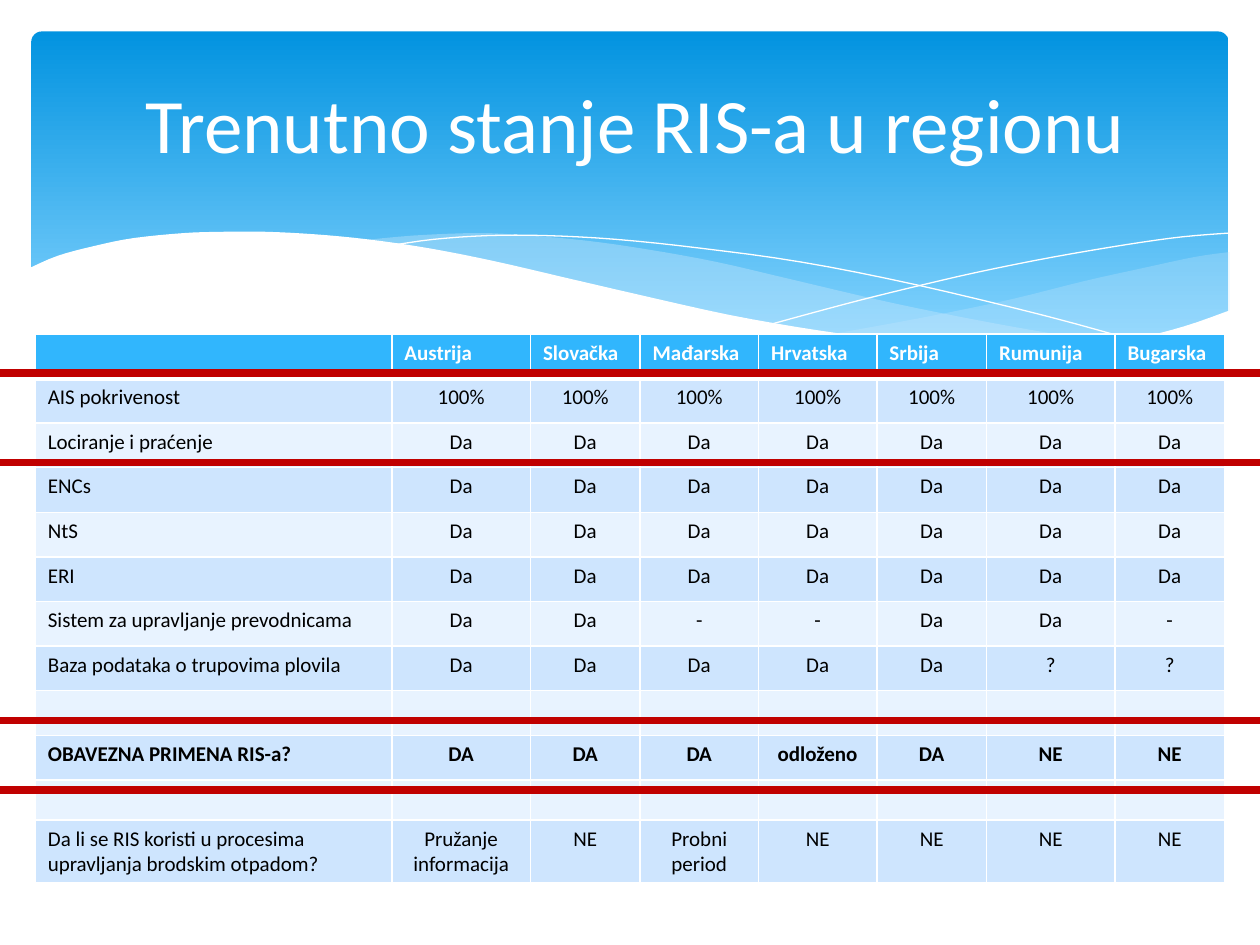
from lxml import etree
from pptx import Presentation
from pptx import util as u
from pptx.dml.color import RGBColor
from pptx.enum import shapes, text
from pptx.oxml.ns import qn

WHITE = RGBColor(0xFF, 0xFF, 0xFF)
BLACK = RGBColor(0, 0, 0)
DEEP = RGBColor(0x02, 0x93, 0xE0)
LIGHT = RGBColor(0x83, 0xD3, 0xFE)
MIST = RGBColor(0xC6, 0xE7, 0xFC)
HEAD = RGBColor(0x31, 0xB6, 0xFD)
BANDS = RGBColor(0xE8, 0xF3, 0xFF), RGBColor(0xCE, 0xE5, 0xFE)
RED = RGBColor(0xC0, 0, 0)
FONT = "Calibri"

RIGHT = [
    [(9.76, 2), (9.48, 2.04), (9.06, 2.13), (8.61, 2.23), (8.05, 2.37), (7.53, 2.48), (7.06, 2.57), (6.61, 2.65)],
    [(6.61, 2.65), (7.05, 2.71), (7.57, 2.76), (8.03, 2.78), (8.54, 2.76), (8.97, 2.7), (9.35, 2.62), (9.76, 2.47)],
]
MID = [
    [(8.93, 2.73), (8.37, 2.65), (7.75, 2.54), (7.06, 2.4), (6.29, 2.22), (5.69, 2.08), (5.14, 1.98),
     (4.65, 1.91), (4.2, 1.87), (3.8, 1.85), (3.28, 1.87), (2.86, 1.91)],
    [(2.86, 1.91), (3.42, 1.99), (4.04, 2.11), (4.49, 2.22), (5.3, 2.4), (6.01, 2.55), (6.65, 2.66),
     (7.22, 2.74), (7.73, 2.77), (8.18, 2.78), (8.57, 2.77), (8.93, 2.73)],
]
FALL = [[(3.09, 1.95), (3.44, 1.9), (3.87, 1.87), (4.33, 1.87), (4.89, 1.9), (5.56, 1.97), (6.36, 2.08),
         (7.27, 2.26), (8.31, 2.51), (9.07, 2.72)]]
RISE = [[(6.13, 2.57), (6.72, 2.41), (7.2, 2.29), (7.76, 2.16), (8.36, 2.04), (8.95, 1.94), (9.38, 1.88),
         (9.75, 1.85)]]
FRONT = [
    [(9.77, 2.46), (9.4, 2.59), (8.99, 2.69), (8.5, 2.75), (8.09, 2.77), (7.61, 2.75), (7.08, 2.7),
     (6.48, 2.62), (5.79, 2.5), (5.03, 2.33), (4.47, 2.2), (3.91, 2.07), (3.4, 1.97), (2.92, 1.9),
     (2.5, 1.86), (2.11, 1.84), (1.77, 1.84), (1.46, 1.85), (1.06, 1.89), (0.76, 1.95), (0.46, 2.03), (0.23, 2.13)],
    [(0.23, 3.29), (9.77, 3.29)],
]

COLS = [2.83, 1.1, 0.87, 0.94, 0.94, 0.87, 1.02, 0.87]
ROWS = [
    ["", "Austrija", "Slovačka", "Mađarska", "Hrvatska", "Srbija", "Rumunija", "Bugarska"],
    ["AIS pokrivenost"] + ["100%"] * 7,
    ["Lociranje i praćenje"] + ["Da"] * 7,
    ["ENCs"] + ["Da"] * 7,
    ["NtS"] + ["Da"] * 7,
    ["ERI"] + ["Da"] * 7,
    ["Sistem za upravljanje prevodnicama", "Da", "Da", "-", "-", "Da", "Da", "-"],
    ["Baza podataka o trupovima plovila"] + ["Da"] * 5 + ["?"] * 2,
    [""] * 8,
    ["OBAVEZNA PRIMENA RIS-a?", "DA", "DA", "DA", "odloženo", "DA", "NE", "NE"],
    [""] * 8,
    ["Da li se RIS koristi u procesima upravljanja brodskim otpadom?", "Pružanje informacija", "NE",
     "Probni period"] + ["NE"] * 4,
]
BOLD = 0, 9
GAP = 10


def write(par, words, size, color, bold=False):
    run = par.add_run()
    run.text = words
    font = run.font
    font.name, font.size, font.bold = FONT, u.Pt(size), bold
    font.color.rgb = color


def smooth(knots, steps=4):
    ends = [knots[0]] + knots + [knots[-1]]
    dots = [knots[0]]
    for a, b, c, d in zip(ends, ends[1:], ends[2:], ends[3:]):
        for step in range(1, steps + 1):
            t = step / steps
            dots.append(tuple(
                q + t * (r - p) / 2 + t * t * (2 * p - 5 * q + 4 * r - s) / 2 + t ** 3 * (3 * q - p - 3 * r + s) / 2
                for p, q, r, s in zip(a, b, c, d)))
    return dots


def wave(slide, left, top, curves, fill=None, alpha=100):
    dots = [(left + u.Inches(x), top + u.Inches(y)) for curve in curves for x, y in smooth(curve)]
    build = slide.shapes.build_freeform(*dots[0], scale=1.0)
    build.add_line_segments(dots[1:], close=fill is not None)
    shape = build.convert_to_shape()
    shape.shadow.inherit = False
    if fill is None:
        shape.fill.background()
        shape.line.color.rgb = WHITE
        shape.line.width = u.Pt(0)
        return
    shape.line.fill.background()
    shape.fill.solid()
    shape.fill.fore_color.rgb = fill
    tint = shape.fill._xPr.find(".//" + qn("a:srgbClr"))
    etree.SubElement(tint, qn("a:alpha"), val=str(alpha * 1000))


def banner(slide, left, top, width):
    pad = u.Inches(0.25)
    card = slide.shapes.add_shape(shapes.MSO_SHAPE.ROUNDED_RECTANGLE, left + pad, top + pad,
                                  width - 2 * pad, u.Inches(2.7))
    card.adjustments[0] = 0.03
    card.shadow.inherit = False
    card.line.fill.background()
    card.fill.gradient()
    card.fill.gradient_angle = 270
    for stop, color, place in zip(card.fill.gradient_stops, (DEEP, LIGHT), (0, 0.9)):
        stop.color.rgb = color
        stop.position = place
    wave(slide, left, top, RIGHT, MIST, 29)
    wave(slide, left, top, MID, MIST, 40)
    wave(slide, left, top, FALL)
    wave(slide, left, top, RISE)
    wave(slide, left, top, FRONT, WHITE)


def title(slide, left, top, width, height):
    frame = slide.shapes.add_textbox(left, top, width, height).text_frame
    frame.word_wrap = True
    frame.vertical_anchor = text.MSO_ANCHOR.BOTTOM
    par = frame.paragraphs[0]
    par.alignment = text.PP_ALIGN.CENTER
    write(par, "Trenutno stanje RIS-a u regionu", 44, WHITE)


def edge(cell, side, width):
    line = etree.SubElement(cell._tc.get_or_add_tcPr(), qn("a:ln" + side), w=str(u.Pt(width)))
    fill = etree.SubElement(line, qn("a:solidFill"))
    etree.SubElement(fill, qn("a:srgbClr"), val=str(WHITE))


def style(cell, row, col, words):
    for side in "LRTB":
        heavy = (row, side) in ((0, "B"), (1, "T"))
        edge(cell, side, 3 if heavy else 1)
    cell.fill.solid()
    cell.fill.fore_color.rgb = BANDS[row % 2] if row else HEAD
    par = cell.text_frame.paragraphs[0]
    if row and col:
        par.alignment = text.PP_ALIGN.CENTER
    if words:
        write(par, words, 12, BLACK if row else WHITE, row in BOLD)
    else:
        etree.SubElement(par._p, qn("a:endParaRPr"), sz="1200")


def grid(slide, left, top, width, height):
    table = slide.shapes.add_table(len(ROWS), len(COLS), left, top, width, height).table
    table.first_row = table.horz_banding = False
    for col, size in zip(table.columns, COLS):
        col.width = u.Inches(size)
    low, last = u.Inches(0.32), u.Inches(0.5)
    for row in table.rows:
        row.height = (height - low - last) // 10
    table.rows[GAP].height = low
    table.rows[len(ROWS) - 1].height = last
    for r, row in enumerate(ROWS):
        for c, words in enumerate(row):
            style(table.cell(r, c), r, c, words)


def frame(slide, left, top, width, height):
    box = slide.shapes.add_shape(shapes.MSO_SHAPE.RECTANGLE, left, top, width, height)
    box.shadow.inherit = False
    box.fill.background()
    box.line.color.rgb = RED
    box.line.width = u.Pt(4.25)


def main():
    deck = Presentation()
    deck.slide_width, deck.slide_height = u.Inches(10), u.Inches(7.5)
    slide = deck.slides.add_slide(deck.slide_layouts[6])
    banner(slide, 0, 0, deck.slide_width)
    title(slide, *map(u.Inches, (0.28, 0.21, 9.53, 1.18)))
    grid(slide, *map(u.Inches, (0.28, 2.65, 9.45, 4.36)))
    frame(slide, *map(u.Inches, (-0.24, 2.96, 10.43, 0.71)))
    frame(slide, *map(u.Inches, (-0.28, 5.72, 10.43, 0.55)))
    deck.save("out.pptx")


if __name__ == "__main__":
    main()
